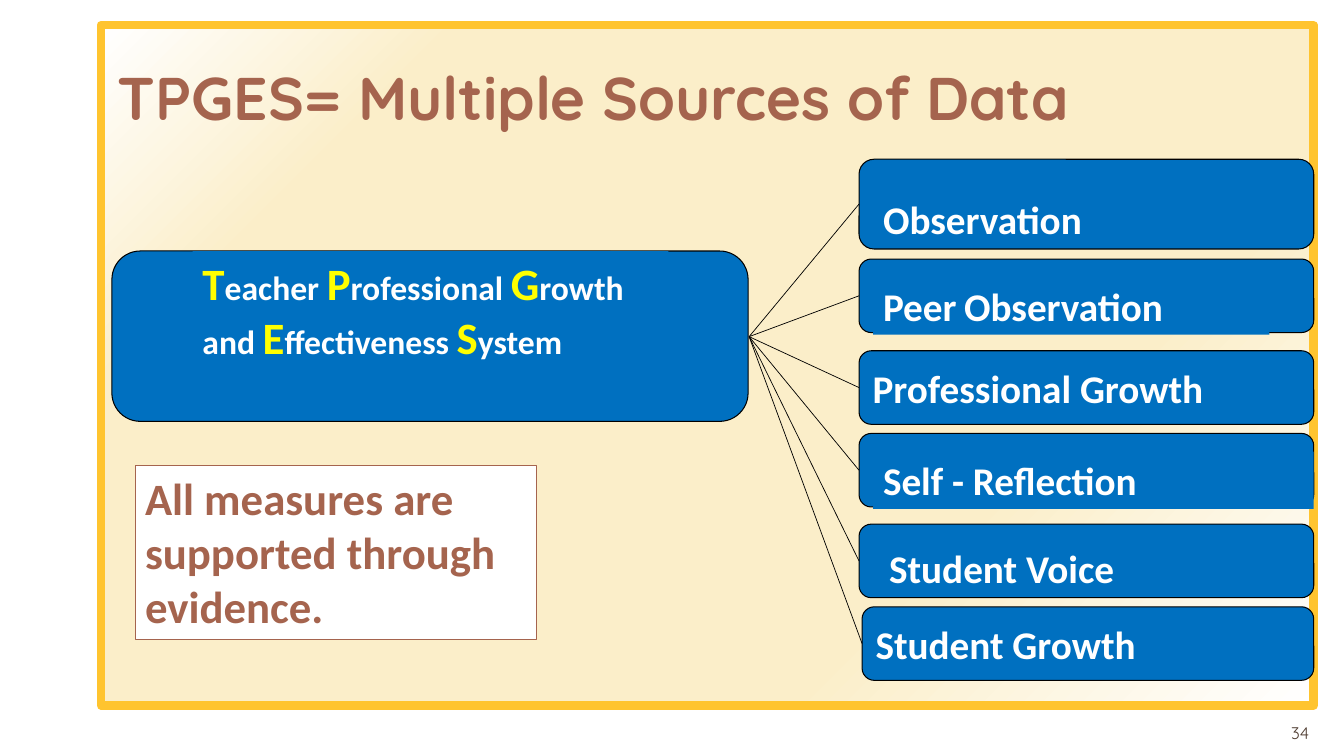
from lxml.etree import SubElement
from pptx import Presentation
from pptx.dml.color import RGBColor
from pptx.enum.shapes import MSO_CONNECTOR, MSO_SHAPE
from pptx.enum.text import MSO_ANCHOR, PP_ALIGN
from pptx.oxml import parse_xml
from pptx.oxml.ns import nsdecls, qn
from pptx.util import Inches, Pt

COLORS = {
    "white": "FFFFFF", "black": "000000", "cream": "FBEEC9", "gold": "FFC42F",
    "brown": "A5644E", "dark": "4E3B30", "blue": "0070C0", "yellow": "FFFF00",
}


def rgb(name):
    return RGBColor.from_string(COLORS[name])


def write_text(frame, paragraphs, size=28, color="white", font="Calibri", bold=True,
               align=PP_ALIGN.LEFT, anchor=MSO_ANCHOR.TOP):
    """Fill a frame; each paragraph is a list of (text, overrides) runs or a string."""
    frame.word_wrap = True
    frame.vertical_anchor = anchor
    for index, runs in enumerate(paragraphs):
        paragraph = frame.paragraphs[0] if index == 0 else frame.add_paragraph()
        paragraph.alignment = align
        for text, own in [(runs, {})] if isinstance(runs, str) else runs:
            run = paragraph.add_run()
            run.text = text
            run.font.name = font
            run.font.bold = bold
            run.font.size = Pt(own.get("size", size))
            run.font.color.rgb = rgb(own.get("color", color))


class SlideBuilder:
    def __init__(self, presentation):
        self.slide = presentation.slides.add_slide(presentation.slide_layouts[5])
        self.shapes = self.slide.shapes

    def title(self, text, box, **style):
        title = self.shapes.title
        title.left, title.top, title.width, title.height = map(Inches, box)
        write_text(title.text_frame, [text], anchor=MSO_ANCHOR.MIDDLE, **style)

    def block(self, box, fill="blue", line=None, line_width=0.75, rounded=False):
        kind = MSO_SHAPE.ROUNDED_RECTANGLE if rounded else MSO_SHAPE.RECTANGLE
        block = self.shapes.add_shape(kind, *map(Inches, box))
        block.shadow.inherit = False
        block.fill.solid()
        block.fill.fore_color.rgb = rgb(fill)
        if line:
            block.line.color.rgb = rgb(line)
            block.line.width = Pt(line_width)
        else:
            block.line.fill.background()
        return block

    def card(self, box):
        return self.block(box, line="black", rounded=True)

    def panel(self, box):
        """Gold frame with a radial cream gradient, placed behind the title."""
        panel = self.block(box, line="gold", line_width=6)
        stops = [(0, "white"), (28, "cream"), (81, "cream"), (100, "white")]
        stop_xml = "".join(
            f'<a:gs pos="{pos * 1000}"><a:srgbClr val="{COLORS[color]}"/></a:gs>'
            for pos, color in stops)
        gradient = parse_xml(
            f'<a:gradFill {nsdecls("a")} rotWithShape="1"><a:gsLst>{stop_xml}</a:gsLst>'
            '<a:path path="circle"><a:fillToRect l="100000" t="100000"/></a:path>'
            '</a:gradFill>')
        properties = panel._element.spPr
        properties.replace(properties.find(qn("a:solidFill")), gradient)
        self.shapes._spTree.insert(2, panel._element)

    def connector(self, start, end):
        line = self.shapes.add_connector(MSO_CONNECTOR.STRAIGHT, *map(Inches, start + end))
        line.line.color.rgb = rgb("black")
        line.line.width = Pt(0.5)
        SubElement(line._element.spPr, qn("a:effectLst"))

    def page_number(self, text, box):
        number = self.shapes.add_textbox(*map(Inches, box))
        write_text(number.text_frame, [text], size=12, color="dark", font="Quicksand",
                   bold=False, align=PP_ALIGN.CENTER, anchor=MSO_ANCHOR.BOTTOM)


def main():
    presentation = Presentation()
    presentation.slide_width = Inches(13.33)
    presentation.slide_height = Inches(7.5)
    builder = SlideBuilder(presentation)

    builder.panel((1, 0.25, 12.03, 6.75))
    builder.title("TPGES= Multiple Sources of Data", (1.07, 0.33, 12.26, 1.25),
                  size=43, color="brown", font="Quicksand")

    builder.card((1.11, 2.49, 6.31, 1.69))
    system_name = []
    for initial, rest in [("T", "eacher "), ("P", "rofessional "), ("G", "rowth and "),
                          ("E", "ffectiveness "), ("S", "ystem")]:
        system_name += [(initial, {"size": 32, "color": "yellow"}), (rest, {})]
    system_label = builder.block((1.91, 2.49, 4.72, 1.18))
    write_text(system_label.text_frame, [system_name], size=24)

    # Each source: text, card left, top, height, and an optional label (left, top, width)
    peer = [("Peer", {}), (" ", {"size": 24}), ("Observation", {})]
    sources = [
        ("Observation", 8.52, 1.58, 0.89, (8.66, 1.89, 3.02)),
        (peer, 8.52, 2.57, 0.73, (8.66, 2.75, 3.93)),
        ("Professional Growth", 8.52, 3.48, 0.73, None),
        ("Self - Reflection", 8.52, 4.3, 0.73, (8.66, 4.48, 4.37)),
        ("Student Voice", 8.52, 5.2, 0.73, (8.72, 5.35, 4.12)),
        ("Student Growth", 8.55, 6.02, 0.73, None),
    ]
    for text, left, top, height, label in sources:
        card = builder.card((left, top, 13.03 - left, height))
        if label:
            write_text(builder.block((*label, 0.57)).text_frame, [text])
        else:
            write_text(card.text_frame, [text], anchor=MSO_ANCHOR.MIDDLE)
        builder.connector((7.43, 3.34), (left, top + height / 2))

    evidence = builder.block((1.34, 4.62, 3.98, 1.72), fill="white", line="brown")
    write_text(evidence.text_frame,
               ["All measures are", "supported through", "evidence."],
               size=32, color="brown")
    builder.page_number("34", (12.56, 6.9, 0.67, 0.52))

    presentation.save("out.pptx")


if __name__ == "__main__":
    main()
